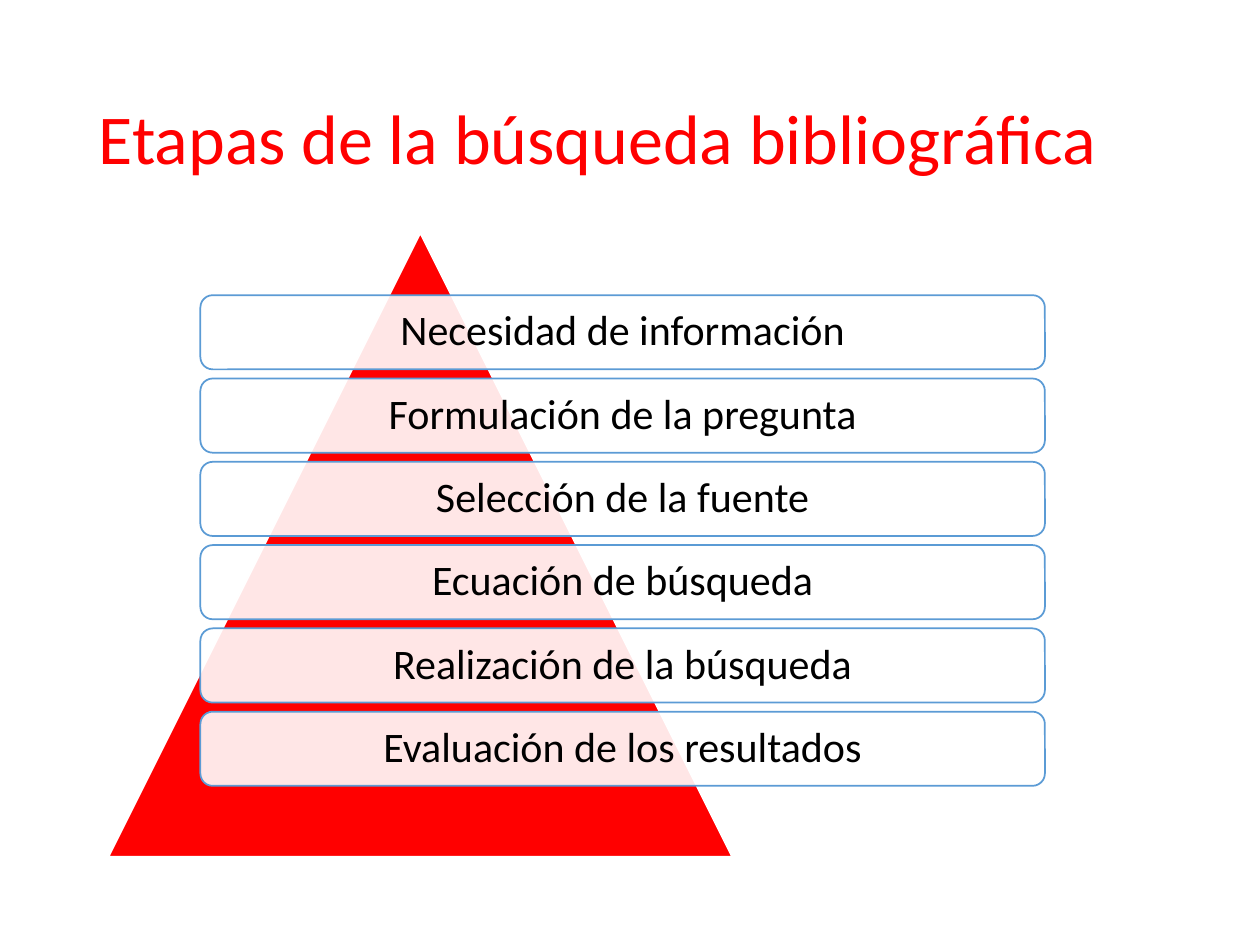
from dataclasses import dataclass

from lxml import etree
from pptx import Presentation
from pptx.dml.color import RGBColor
from pptx.enum.shapes import MSO_SHAPE
from pptx.enum.text import MSO_ANCHOR, PP_ALIGN
from pptx.oxml.ns import qn
from pptx.util import Pt

TRIANGLE = MSO_SHAPE.ISOSCELES_TRIANGLE
ROUNDED = MSO_SHAPE.ROUNDED_RECTANGLE
MIDDLE = MSO_ANCHOR.MIDDLE
LEFT, CENTER = PP_ALIGN.LEFT, PP_ALIGN.CENTER


@dataclass(frozen=True)
class Theme:
    font: str = "Calibri"
    title_size: int = 40
    stage_size: int = 24
    red: RGBColor = RGBColor(0xFF, 0x00, 0x00)
    white: RGBColor = RGBColor(0xFF, 0xFF, 0xFF)
    black: RGBColor = RGBColor(0x00, 0x00, 0x00)
    blue: RGBColor = RGBColor(0x5B, 0x9B, 0xD5)
    stage_opacity: int = 90


THEME = Theme()
TITLE = "Etapas de la búsqueda bibliográfica"
STAGES = (
    "Necesidad de información",
    "Formulación de la pregunta",
    "Selección de la fuente",
    "Ecuación de búsqueda",
    "Realización de la búsqueda",
    "Evaluación de los resultados",
)
STAGE_LEFT, STAGE_TOP, STAGE_WIDTH, STAGE_HEIGHT = 114.5, 168.7, 482.6, 42.4
STAGE_PITCH = 47.6


def write_text(shape, text, size, color, alignment):
    """Put one formatted line of text in a shape."""
    text_frame = shape.text_frame
    text_frame.word_wrap = True
    text_frame.vertical_anchor = MIDDLE
    text_frame.text = text
    paragraph = text_frame.paragraphs[0]
    paragraph.alignment = alignment
    paragraph.line_spacing = 0.9
    font = paragraph.runs[0].font
    font.name = THEME.font
    font.size = Pt(size)
    font.color.rgb = color


def add_title(slide, text):
    """Add the slide heading."""
    box = slide.shapes.add_textbox(Pt(49.5), Pt(28.75), Pt(621), Pt(104.4))
    write_text(box, text, THEME.title_size, THEME.red, LEFT)


def add_solid(slide, preset, left, top, width, height, fill, line):
    """Add a filled, outlined shape without shadow."""
    shape = slide.shapes.add_shape(preset, Pt(left), Pt(top), Pt(width), Pt(height))
    shape.shadow.inherit = False
    shape.fill.solid()
    shape.fill.fore_color.rgb = fill
    shape.line.color.rgb = line
    shape.line.width = Pt(1)
    return shape


def set_opacity(shape, percent):
    """Make the solid fill of a shape translucent."""
    color = shape.fill._xPr.find(qn("a:solidFill"))[0]
    etree.SubElement(color, qn("a:alpha")).set("val", str(percent * 1000))


def add_stage(slide, index, text):
    """Add one stage of the list over the pyramid."""
    top = STAGE_TOP + index * STAGE_PITCH
    stage = add_solid(slide, ROUNDED, STAGE_LEFT, top, STAGE_WIDTH, STAGE_HEIGHT,
                      THEME.white, THEME.blue)
    set_opacity(stage, THEME.stage_opacity)
    write_text(stage, text, THEME.stage_size, THEME.black, CENTER)


def main():
    """Build and save the slide."""
    presentation = Presentation()
    presentation.slide_width = Pt(720)
    presentation.slide_height = Pt(540)
    slide = presentation.slides.add_slide(presentation.slide_layouts[6])
    add_title(slide, TITLE)
    add_solid(slide, TRIANGLE, 62, 133.2, 356.4, 356.4, THEME.red, THEME.white)
    for index, text in enumerate(STAGES):
        add_stage(slide, index, text)
    presentation.save("out.pptx")


if __name__ == "__main__":
    main()
